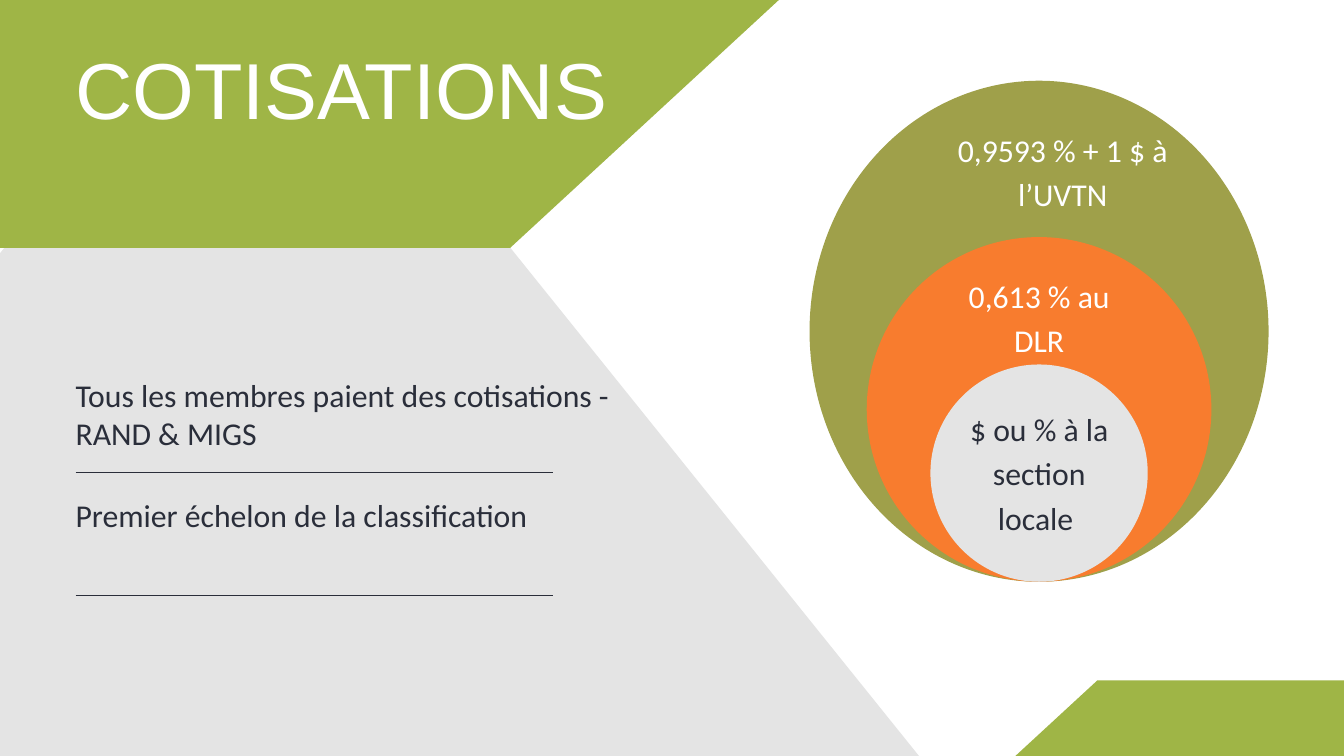
from dataclasses import dataclass

from lxml import etree
from pptx import Presentation
from pptx.dml.color import RGBColor
from pptx.enum.shapes import MSO_CONNECTOR, MSO_SHAPE
from pptx.enum.text import MSO_ANCHOR, MSO_AUTO_SIZE, PP_ALIGN
from pptx.oxml.ns import qn
from pptx.util import Pt


@dataclass(frozen=True)
class Theme:
    green: str = "9FB546"
    olive: str = "9FA04A"
    orange: str = "F87C2E"
    grey: str = "E4E4E4"
    ink: str = "2A2E3A"
    white: str = "FFFFFF"
    title_font: str = "Arial"
    body_font: str = "Calibri"
    title_size: float = 85
    body_size: float = 34
    rule_width: float = 0.75


THEME = Theme()
MARGIN = 81
RULE_END = 592
CIRCLE_CENTER = 1113.3
CIRCLE_BOTTOM = 623.3
LABEL_LEFT = 1020.2


def fill_flat(shape, color):
    shape.shadow.inherit = False
    shape.fill.solid()
    shape.fill.fore_color.rgb = RGBColor.from_string(color)
    shape.line.fill.background()


def add_polygon(slide, corners, color):
    start, *others = [(Pt(x), Pt(y)) for x, y in corners]
    builder = slide.shapes.build_freeform(*start, scale=1.0)
    builder.add_line_segments(others, close=True)
    fill_flat(builder.convert_to_shape(), color)


def add_circle(slide, width, height, color):
    """Add an ellipse standing on the bottom point that all levels share."""
    circle = slide.shapes.add_shape(
        MSO_SHAPE.OVAL, Pt(CIRCLE_CENTER - width / 2), Pt(CIRCLE_BOTTOM - height),
        Pt(width), Pt(height))
    fill_flat(circle, color)


def format_text(frame, text, font, size, color, leading, align=PP_ALIGN.LEFT):
    frame.word_wrap = True
    frame.auto_size = MSO_AUTO_SIZE.NONE
    frame.vertical_anchor = MSO_ANCHOR.TOP
    frame.margin_left = frame.margin_right = frame.margin_top = frame.margin_bottom = 0
    frame.text = text
    paragraph = frame.paragraphs[0]
    paragraph.alignment = align
    paragraph.line_spacing = Pt(leading)
    paragraph.space_before = Pt(0)
    run_font = paragraph.runs[0].font
    run_font.name = font
    run_font.size = Pt(size)
    run_font.color.rgb = RGBColor.from_string(color)


def add_title(slide, text):
    title = slide.shapes.title
    title.left, title.top, title.width, title.height = (
        Pt(MARGIN), Pt(43), Pt(598.3), Pt(101.5))
    format_text(title.text_frame, text, THEME.title_font, THEME.title_size,
                THEME.white, leading=102)
    # The placeholder comes first, so bring it in front of the backdrop.
    slide.shapes.element.append(title.element)


def add_text(slide, text, left, top, width, height, color, leading, align):
    box = slide.shapes.add_textbox(Pt(left), Pt(top), Pt(width), Pt(height))
    format_text(box.text_frame, text, THEME.body_font, THEME.body_size,
                color, leading, align)


def add_label(slide, text, top, width, height, color):
    add_text(slide, text, LABEL_LEFT, top, width, height, color, 47.6, PP_ALIGN.CENTER)


def add_statement(slide, text, top, width):
    add_text(slide, text, MARGIN, top, width, 82, THEME.ink, 40.8, PP_ALIGN.LEFT)


def add_rule(slide, y):
    rule = slide.shapes.add_connector(
        MSO_CONNECTOR.STRAIGHT, Pt(MARGIN), Pt(y), Pt(RULE_END), Pt(y))
    rule.line.color.rgb = RGBColor.from_string(THEME.ink)
    rule.line.width = Pt(THEME.rule_width)
    etree.SubElement(rule.element.spPr, qn("a:effectLst"))


def main():
    deck = Presentation()
    deck.slide_width, deck.slide_height = Pt(1440), Pt(810)
    slide = deck.slides.add_slide(deck.slide_layouts[5])

    add_polygon(slide, [(203.8, 18), (347.8, 18), (986.4, 812.2), (-434.9, 812.2)],
                THEME.grey)
    add_polygon(slide, [(-327.6, 0), (834.5, 0), (546.5, 265.7), (-39.6, 265.7)],
                THEME.green)
    add_title(slide, "COTISATIONS")

    for width, height, color in [
        (491.8, 536.8, THEME.olive),
        (369.3, 369.3, THEME.orange),
        (232.8, 232.8, THEME.grey),
    ]:
        add_circle(slide, width, height, color)

    for text, top, width, height, color in [
        ("0,9593 % + 1 $ à l’UVTN", 133.2, 236.9, 93.6, THEME.white),
        ("$ ou % à la section locale ", 432, 186.5, 141.1, THEME.ink),
        ("0,613 % au DLR", 289.4, 186.5, 93.6, THEME.white),
    ]:
        add_label(slide, text, top, width, height, color)

    for text, top, width, rule_y in [
        ("Tous les membres paient des cotisations - RAND & MIGS", 402.5, 598.3, 506.5),
        ("Premier échelon de la classification", 531.4, 526.3, 638),
    ]:
        add_statement(slide, text, top, width)
        add_rule(slide, rule_y)

    add_polygon(slide, [(1175.8, 729), (1453.7, 729), (1541.5, 810), (1087.9, 810)],
                THEME.green)
    deck.save("out.pptx")


if __name__ == "__main__":
    main()
